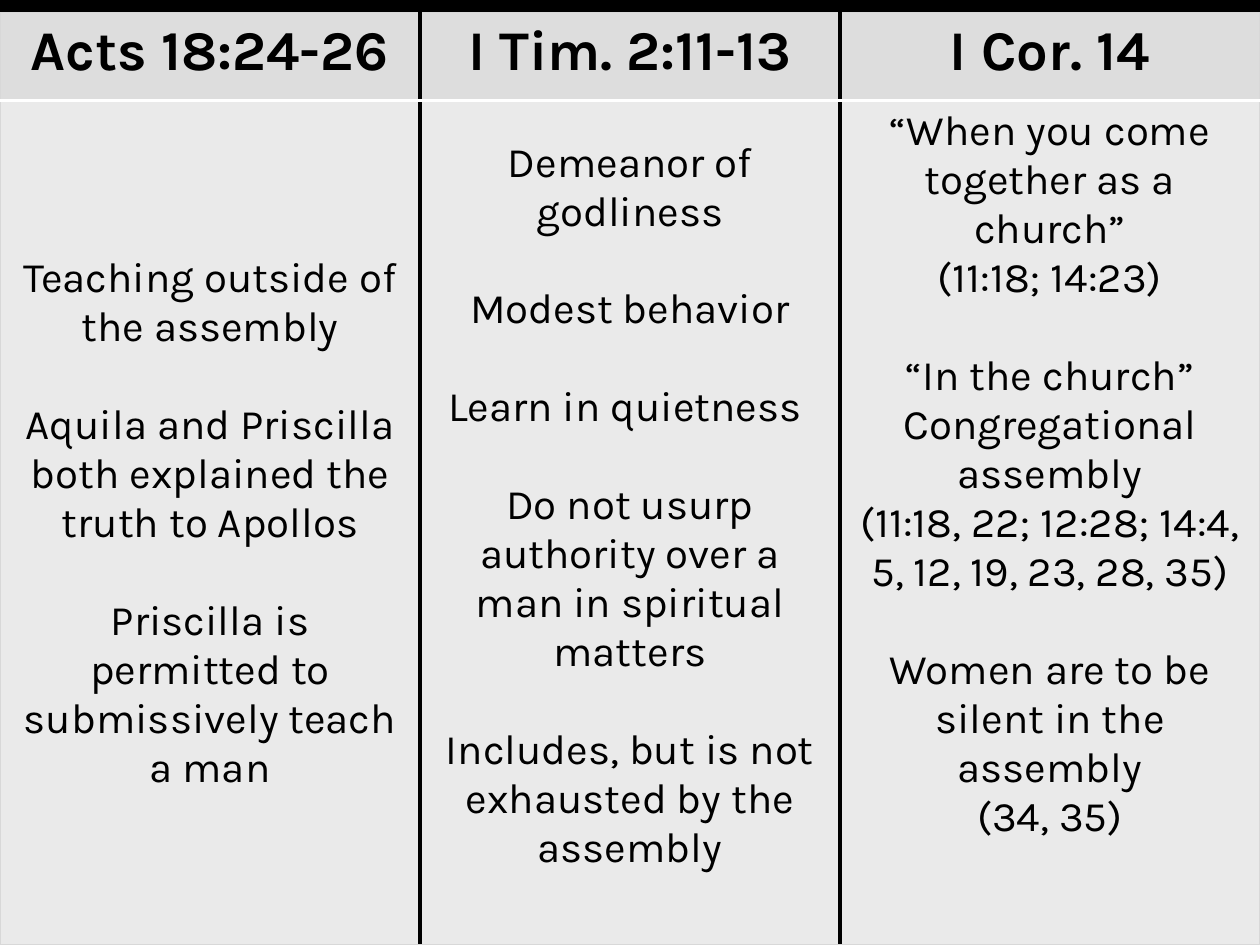
from lxml.etree import SubElement
from pptx import Presentation
from pptx.dml.color import RGBColor
from pptx.enum.text import PP_ALIGN as Align
from pptx.oxml.ns import qn
from pptx.util import Inches, Pt

BLACK = RGBColor(0x00, 0x00, 0x00)
WHITE = RGBColor(0xFF, 0xFF, 0xFF)
EDGE = RGBColor(0xD8, 0xD8, 0xD8)
HEAD = RGBColor(0xDD, 0xDD, 0xDD)
BODY = RGBColor(0xEA, 0xEA, 0xEA)

FONT = "Karla"
GAP = Pt(28)  # one line of body text
THIN, RULE, BAR = (EDGE, 0.75), (WHITE, 2), (BLACK, 3)

# Heading, top margin in inches, groups of paragraphs
COLS = [
    ("Acts 18:24-26", 1.22, [
        ["Teaching outside of the assembly"],
        ["Aquila and Priscilla both explained the truth to Apollos"],
        ["Priscilla is permitted to submissively teach a man"],
    ]),
    ("I Tim. 2:11-13", 0.3, [
        ["Demeanor of godliness"],
        ["Modest behavior"],
        ["Learn in quietness "],
        ["Do not usurp authority over a man in spiritual matters"],
        ["Includes, but is not exhausted by the assembly"],
    ]),
    ("I Cor. 14", 0.05, [
        ["“When you come together as a church”", "(11:18; 14:23)"],
        ["“In the church”", "Congregational assembly",
         "(11:18, 22; 12:28; 14:4, 5, 12, 19, 23, 28, 35)"],
        ["Women are to be silent in the assembly", "(34, 35)"],
    ]),
]


def set_edges(cell, **edges):
    props = cell._tc.get_or_add_tcPr()
    for side in "LRTB":
        color, width = edges[side]
        line = SubElement(props, qn(f"a:ln{side}"), w=str(Pt(width)))
        fill = SubElement(line, qn("a:solidFill"))
        SubElement(fill, qn("a:srgbClr"), val=str(color))


def fill_cell(cell, groups, size, bold, color):
    cell.fill.solid()
    cell.fill.fore_color.rgb = color
    frame = cell.text_frame
    frame.text = "\n".join(text for group in groups for text in group)
    firsts = [i == 0 for group in groups for i in range(len(group))]
    for i, (para, first) in enumerate(zip(frame.paragraphs, firsts)):
        para.alignment = Align.CENTER
        if first and i:
            para.space_before = GAP
        for run in para.runs:
            run.font.name = FONT
            run.font.size = Pt(size)
            run.font.bold = bold
            run.font.color.rgb = BLACK


def add_verses(slide, left, top, width, height):
    head = Inches(0.7)
    table = slide.shapes.add_table(2, len(COLS), left, top, width, height).table
    table.rows[0].height = head
    table.rows[1].height = height - head
    last = len(COLS) - 1
    for i, (title, margin, groups) in enumerate(COLS):
        table.columns[i].width = int(width / len(COLS))
        sides = {"L": BAR if i else THIN, "R": BAR if i < last else THIN}
        # Heading
        cell = table.cell(0, i)
        set_edges(cell, T=THIN, B=RULE, **sides)
        fill_cell(cell, [[title]], 32, True, HEAD)
        # Points
        cell = table.cell(1, i)
        set_edges(cell, T=RULE, B=THIN, **sides)
        fill_cell(cell, groups, 24, False, BODY)
        cell.margin_top = Inches(margin)


def main():
    deck = Presentation()
    deck.slide_width, deck.slide_height = Inches(10), Inches(7.5)
    slide = deck.slides.add_slide(deck.slide_layouts[6])
    back = slide.background.fill
    back.solid()
    back.fore_color.rgb = BLACK
    add_verses(slide, Inches(0), Inches(0.1), Inches(10), Inches(7.4))
    deck.save("out.pptx")


if __name__ == "__main__":
    main()
